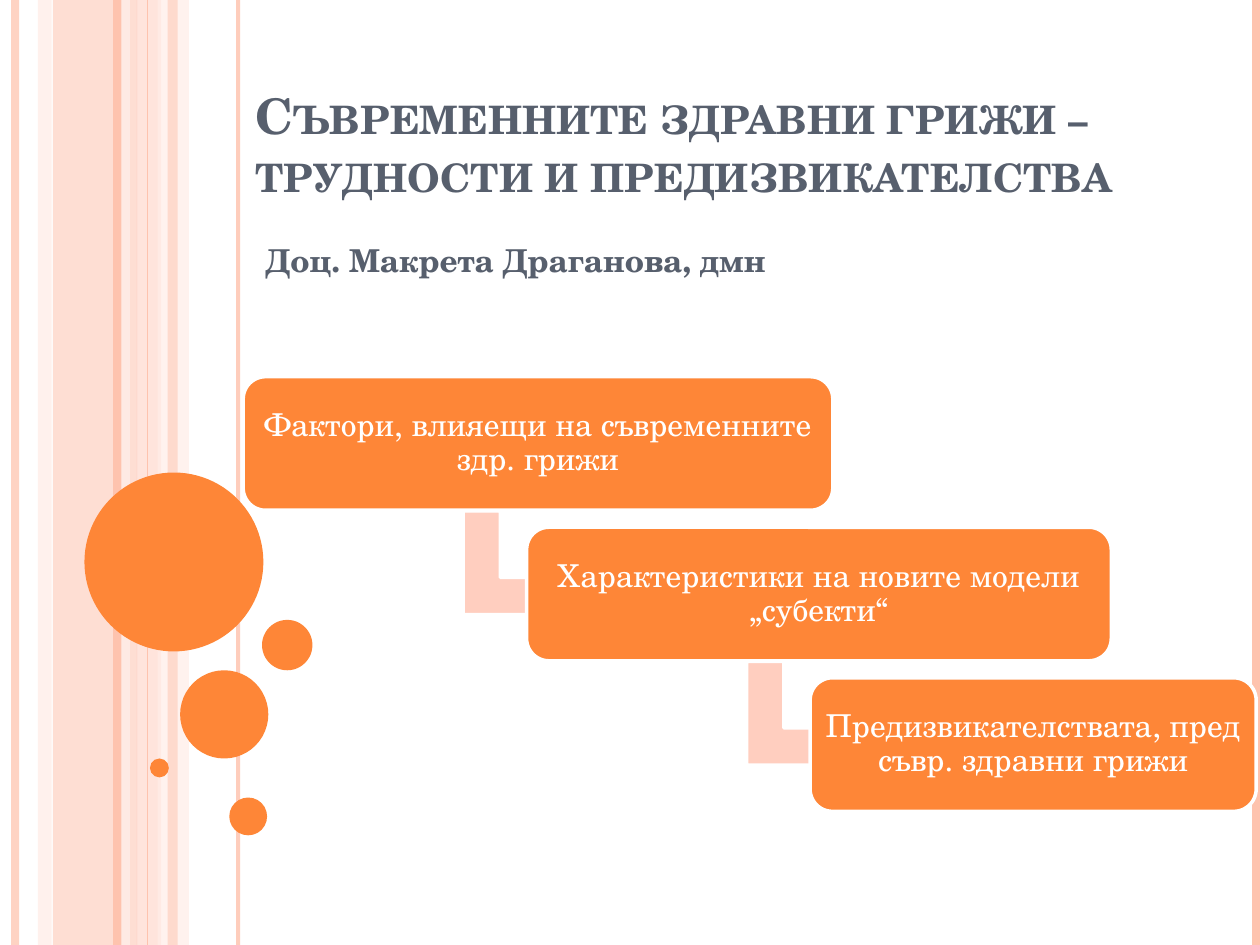
from pptx import Presentation
from pptx.dml.color import RGBColor as Rgb
from pptx.enum.shapes import MSO_CONNECTOR as Link, MSO_SHAPE as Kind
from pptx.enum.text import MSO_ANCHOR as Anchor, PP_ALIGN as Align
from pptx.oxml.ns import qn
from pptx.util import Inches, Pt
from lxml.etree import SubElement

COLORS = {"orange": "FE8637", "peach": "FEC3AE", "blush": "FFD9CE", "pale": "FFEDE8",
          "arrow": "FFCEBF", "slate": "575F6D", "white": "FFFFFF"}
FONT = "TeX Gyre Schola"
WIDE, HIGH = 10, 7.5

# Stripes: left, width, colour, opacity in percent
BANDS = [(0.42, 0.67, "peach", 54), (0.3, 0.11, "blush", 36),
         (1.08, 0.2, "blush", 70), (1.25, 0.25, "pale", 71)]
EDGE = (1.33, 0.08, "peach", 51)
# Lines: x, weight in points, colour, opacity
RULES = [(0.12, 4.5, "peach", 73), (1, 4.5, "pale", 83), (0.93, 4.5, "peach", 100),
         (1.89, 2.25, "peach", 82), (1.17, 0.75, "peach", 100), (9.97, 4.5, "peach", 100)]
# Circles: left, top, diameter
DOTS = [(0.67, 3.75, 1.42), (1.43, 5.32, 0.7), (1.19, 6.02, 0.15),
        (1.82, 6.33, 0.3), (2.08, 4.92, 0.4)]
# Steps: width, text
STEPS = [(4.68, "Фактори, влияещи на съвременните здр. грижи"),
         (4.64, "Характеристики на новите модели „субекти“"),
         (3.54, "Предизвикателствата, пред съвр. здравни грижи")]


def tint(name):
    return Rgb.from_string(COLORS[name])


def fade(shape, percent):
    if percent < 100:
        for color in shape._element.spPr.iter(qn("a:srgbClr")):
            SubElement(color, qn("a:alpha"), val=str(percent * 1000))


def add_form(slide, kind, box, color, edge=None, adjust=()):
    form = slide.shapes.add_shape(kind, *map(Inches, box))
    form.shadow.inherit = False
    form.fill.solid()
    form.fill.fore_color.rgb = tint(color)
    if edge:
        form.line.color.rgb = tint(edge)
        form.line.width = Pt(2)
    else:
        form.line.fill.background()
    for spot, value in enumerate(adjust):
        form.adjustments[spot] = value
    return form


def write(frame, text, size, color, insets, bold=False, **layout):
    frame.word_wrap = True
    sides = ("margin_left", "margin_top", "margin_right", "margin_bottom")
    for side, inset in zip(sides, insets):
        setattr(frame, side, Inches(inset))
    para = frame.paragraphs[0]
    for name, value in layout.items():
        setattr(para, name, value)
    run = para.add_run()
    run.text = text
    for name, value in {"name": FONT, "size": Pt(size), "bold": bold}.items():
        setattr(run.font, name, value)
    run.font.color.rgb = tint(color)
    return run


def add_band(slide, left, width, color, percent):
    fade(add_form(slide, Kind.RECTANGLE, (left, 0, width, HIGH), color), percent)


def add_side(slide):
    """Striped margin with circles."""
    for band in BANDS:
        add_band(slide, *band)
    for x, weight, color, percent in RULES:
        rule = slide.shapes.add_connector(Link.STRAIGHT, Inches(x), 0, Inches(x), Inches(HIGH))
        rule.line.color.rgb = tint(color)
        rule.line.width = Pt(weight)
        fade(rule, percent)
        SubElement(rule._element.spPr, qn("a:effectLst"))
    add_band(slide, *EDGE)
    for left, top, size in DOTS:
        add_form(slide, Kind.OVAL, (left, top, size, size), "orange")


def add_head(slide, title_box, author_box):
    """Title in small capitals, with the author below."""
    frame = slide.shapes.add_textbox(*map(Inches, title_box)).text_frame
    frame.vertical_anchor = Anchor.BOTTOM
    run = write(frame, "Съвременните здравни грижи – трудности и предизвикателства",
                28, "slate", (0.1, 0.05, 0.1, 0.82), bold=True)
    run.font._element.set("cap", "small")
    frame = slide.shapes.add_textbox(*map(Inches, author_box)).text_frame
    write(frame, "Доц. Макрета Драганова, дмн", 18, "slate", (0.1, 0.05, 0.1, 0.05), bold=True)


def add_steps(slide, left, top, across=2.25, down=1.195, tall=1.06):
    """Staircase of boxes; each arrow runs behind the next box."""
    for index, (width, text) in enumerate(STEPS):
        x, y = left + index * across, top + index * down
        if index < len(STEPS) - 1:
            arrow = add_form(slide, Kind.BENT_UP_ARROW, (x + 1.81, y + 1, 0.9, 1.03),
                             "arrow", "white", (0.328, 0.25, 0.358))
            arrow.rotation = 90
        step = add_form(slide, Kind.ROUNDED_RECTANGLE, (x, y, width, tall),
                        "orange", "white", (0.167,))
        step.text_frame.vertical_anchor = Anchor.MIDDLE
        write(step.text_frame, text, 18, "white", (0.07,) * 4,
              alignment=Align.CENTER, line_spacing=0.9)


def main():
    deck = Presentation()
    deck.slide_width, deck.slide_height = Inches(WIDE), Inches(HIGH)
    slide = deck.slides.add_slide(deck.slide_layouts[6])
    add_side(slide)
    add_head(slide, (1.93, 0.36, 8.19, 2.07), (2.01, 1.86, 7.07, 0.55))
    add_steps(slide, 1.93, 2.99)
    deck.save("out.pptx")


if __name__ == "__main__":
    main()
